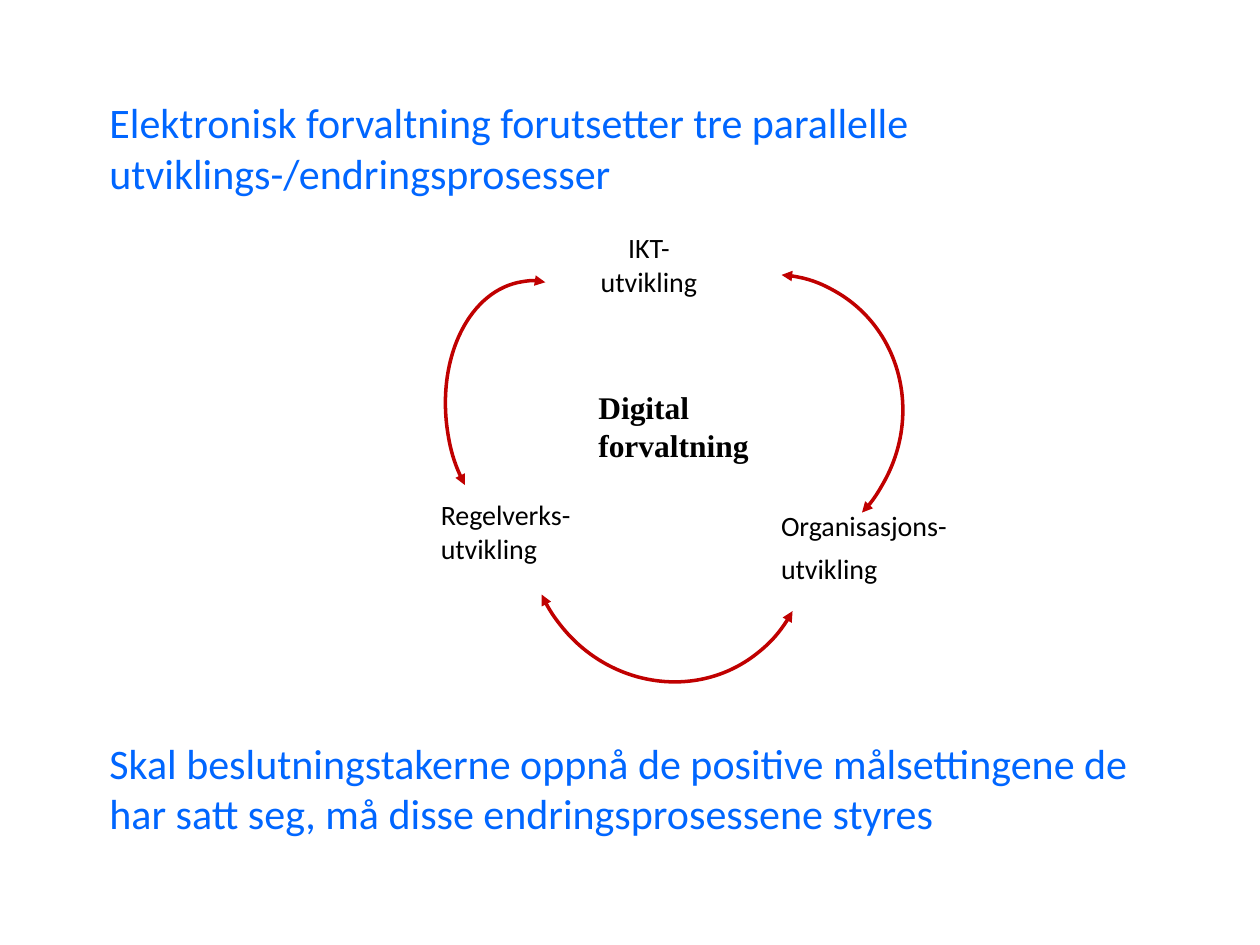
from dataclasses import dataclass
from math import cos, radians, sin

from lxml.etree import SubElement
from pptx import Presentation
from pptx.dml.color import RGBColor
from pptx.enum.text import MSO_AUTO_SIZE, PP_ALIGN as Align
from pptx.oxml.ns import qn
from pptx.slide import Slide
from pptx.util import Inches, Pt

Point = tuple[float, float]
Box = tuple[float, float, float, float]


@dataclass
class Label:
    box: Box
    paragraphs: list[str]
    size: float = 16
    font: str = "Calibri"
    color: str = "000000"
    bold: bool = False
    align: Align = Align.LEFT
    space_after: float = 10
    grow: bool = False


@dataclass
class Arc:
    box: Box
    rotation: float
    points: list[Point]


def statement(top: float, text: str) -> Label:
    return Label((0.77, top, 8.75, 0.91), [text], 24, color="0066FF", space_after=0, grow=True)


PROCESSES = [
    Label((4.65, 3.03, 1.95, 0.95), ["Digital forvaltning"], 18, "Times New Roman", bold=True),
    Label((6.1, 3.99, 1.91, 0.82), ["Organisasjons-", "utvikling"], space_after=5),
    Label((3.84, 1.78, 2.62, 1.22), ["IKT-\vutvikling"], align=Align.CENTER),
    Label((3.4, 3.9, 1.46, 0.78), ["Regelverks-\vutvikling"]),
]

STATEMENTS = [
    statement(0.72, "Elektronisk forvaltning forutsetter tre parallelle utviklings-/endringsprosesser"),
    statement(5.8, "Skal beslutningstakerne oppnå de positive målsettingene de har satt seg, "
                   "må disse endringsprosessene styres"),
]

ARCS = [
    Arc((5.85, 2.33, 1.42, 1.52), 119.7,
        [(6.84, 4.07), (6.91, 4), (6.96, 3.92), (7.01, 3.84), (7.32, 3.29),
         (7.15, 2.61), (6.63, 2.31), (6.5, 2.24), (6.36, 2.19), (6.2, 2.18)]),
    Arc((3.5, 2.27, 0.94, 1.53), 351.6,
        [(4.33, 2.24), (4.27, 2.22), (4.21, 2.22), (4.15, 2.23), (3.73, 2.29),
         (3.47, 2.83), (3.56, 3.42), (3.58, 3.57), (3.62, 3.72), (3.69, 3.85)]),
    Arc((4.6, 4.07, 1.42, 1.52), 232,
        [(4.3, 4.72), (4.34, 4.81), (4.39, 4.89), (4.45, 4.96), (4.83, 5.46),
         (5.53, 5.56), (6, 5.19), (6.12, 5.1), (6.22, 4.98), (6.29, 4.85)]),
]


def rgb(color: str) -> RGBColor:
    return RGBColor.from_string(color)


def add_label(slide: Slide, label: Label) -> None:
    text_frame = slide.shapes.add_textbox(*map(Inches, label.box)).text_frame
    text_frame.word_wrap = True
    if label.grow:
        text_frame.auto_size = MSO_AUTO_SIZE.SHAPE_TO_FIT_TEXT
    for index, text in enumerate(label.paragraphs):
        paragraph = text_frame.add_paragraph() if index else text_frame.paragraphs[0]
        paragraph.text = text
        paragraph.alignment = label.align
        paragraph.space_after = Pt(label.space_after)
        for run in paragraph.runs:
            run.font.name = label.font
            run.font.size = Pt(label.size)
            run.font.bold = label.bold
            run.font.color.rgb = rgb(label.color)


def unrotated_points(arc: Arc) -> list[Point]:
    left, top, width, height = arc.box
    center_x, center_y = left + width / 2, top + height / 2
    cosine, sine = cos(radians(arc.rotation)), sin(radians(arc.rotation))
    points = []
    for x, y in arc.points:
        dx, dy = x - center_x, y - center_y
        points.append((center_x + dx * cosine + dy * sine, center_y - dx * sine + dy * cosine))
    for index in (2, 3, 4):
        points[index] = (points[index][0], top)
    for index in (5, 6, 7):
        points[index] = (left, points[index][1])
    return points


def add_arc(slide: Slide, arc: Arc) -> None:
    """Draw a rotated double-headed arrow that touches the top and left of its box."""
    start, *rest = [(Inches(x), Inches(y)) for x, y in unrotated_points(arc)]
    builder = slide.shapes.build_freeform(*start)
    builder.add_line_segments(rest, close=False)
    shape = builder.convert_to_shape()
    shape.left, shape.top, shape.width, shape.height = map(Inches, arc.box)
    shape.rotation = arc.rotation
    shape.shadow.inherit = False
    shape.fill.background()
    shape.line.color.rgb = rgb("C00000")
    shape.line.width = Pt(2)

    path = next(shape.element.iter(qn("a:path")))
    segments = path.findall(qn("a:lnTo"))
    for first in range(0, len(segments), 3):
        curve = SubElement(path, qn("a:cubicBezTo"))
        for segment in segments[first:first + 3]:
            curve.append(segment[0])
            path.remove(segment)

    outline = shape.line._get_or_add_ln()
    for end in ("a:headEnd", "a:tailEnd"):
        SubElement(outline, qn(end), type="triangle")


def main() -> None:
    presentation = Presentation()
    presentation.slide_width = Inches(10)
    presentation.slide_height = Inches(7.5)
    slide = presentation.slides.add_slide(presentation.slide_layouts[6])
    for label in PROCESSES:
        add_label(slide, label)
    for arc in ARCS:
        add_arc(slide, arc)
    for label in STATEMENTS:
        add_label(slide, label)
    presentation.save("out.pptx")


if __name__ == "__main__":
    main()
